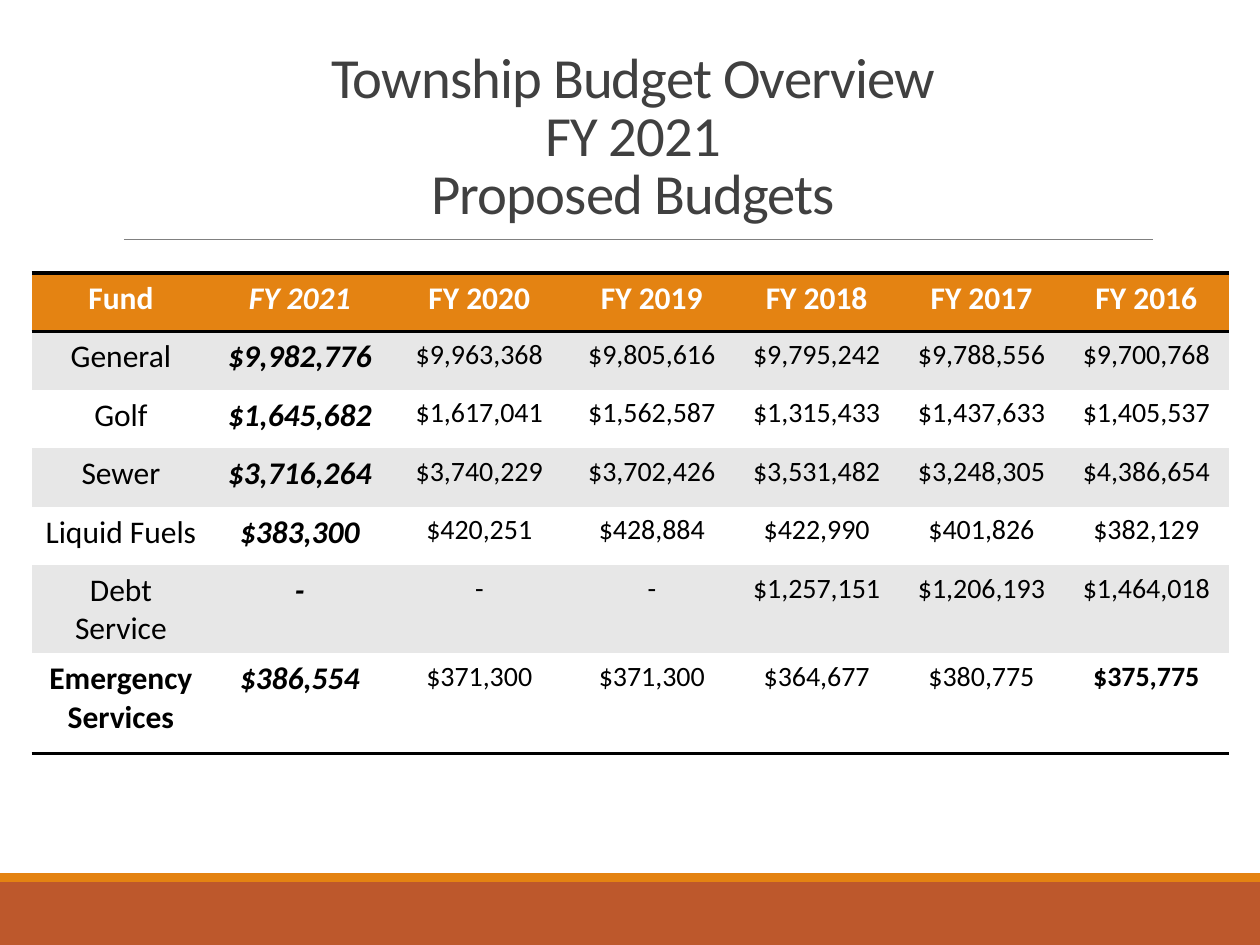
from pptx import Presentation
from pptx.dml.color import RGBColor
from pptx.enum import shapes, text
from pptx.oxml import parse_xml
from pptx.oxml.ns import nsdecls, qn
from pptx.util import Pt

ORANGE = RGBColor(0xE4, 0x83, 0x12)
RUST = RGBColor(0xBD, 0x58, 0x2C)
GRAY = RGBColor(0x80, 0x80, 0x80)
CHARCOAL = RGBColor(0x40, 0x40, 0x40)
BAND = RGBColor(0xE7, 0xE7, 0xE7)
WHITE = RGBColor(0xFF, 0xFF, 0xFF)
BLACK = RGBColor(0, 0, 0)
FONT = "Calibri"
NO_STYLE = "{2D5ABB26-0587-4C30-8999-92F81FD0307C}"

TITLE = ["Township Budget Overview", "FY 2021", "Proposed Budgets"]
BUDGETS = [
    ["Fund", "FY 2021", "FY 2020", "FY 2019", "FY 2018", "FY 2017", "FY 2016"],
    ["General", "$9,982,776", "$9,963,368", "$9,805,616", "$9,795,242", "$9,788,556", "$9,700,768"],
    ["Golf", "$1,645,682", "$1,617,041", "$1,562,587", "$1,315,433", "$1,437,633", "$1,405,537"],
    ["Sewer", "$3,716,264", "$3,740,229", "$3,702,426", "$3,531,482", "$3,248,305", "$4,386,654"],
    ["Liquid Fuels", "$383,300", "$420,251", "$428,884", "$422,990", "$401,826", "$382,129"],
    ["Debt Service", "-", "-", "-", "$1,257,151", "$1,206,193", "$1,464,018"],
    ["Emergency Services", "$386,554", "$371,300", "$371,300", "$364,677", "$380,775", "$375,775"],
]
COLUMN_WIDTHS = [102.2, 102.2, 103] + [94.2] * 4
ROW_HEIGHTS = [33.4] * 6 + [57.2]


def add_footer(page, left, top, width, height):
    """Draw a thin orange strip above a rust bar."""
    strip = 5
    for color, y, h in ((RUST, top + strip, height - strip), (ORANGE, top, strip)):
        bar = page.shapes.add_shape(
            shapes.MSO_SHAPE.RECTANGLE, Pt(left), Pt(y), Pt(width), Pt(h))
        bar.shadow.inherit = False
        bar.fill.solid()
        bar.fill.fore_color.rgb = color
        bar.line.fill.background()


def add_title(page, left, top, width, height):
    """Write the centred title and the rule along the bottom of its box."""
    bottom = top + height
    rule = page.shapes.add_connector(
        shapes.MSO_CONNECTOR.STRAIGHT,
        Pt(left + 6), Pt(bottom), Pt(left + width), Pt(bottom))
    rule.line.color.rgb = GRAY
    rule.line.width = Pt(0.5)
    rule._element.spPr.append(parse_xml(f"<a:effectLst {nsdecls('a')}/>"))

    box = page.shapes.add_textbox(Pt(left), Pt(top), Pt(width), Pt(height))
    frame = box.text_frame
    frame.word_wrap = True
    frame.vertical_anchor = text.MSO_ANCHOR.MIDDLE
    para = frame.paragraphs[0]
    para.text = "\v".join(TITLE)
    para.alignment = text.PP_ALIGN.CENTER
    para.line_spacing = 0.85
    para.font.name = FONT
    para.font.size = Pt(32.4)
    para.font.color.rgb = CHARCOAL
    for span in para.runs:
        span._r.get_or_add_rPr().set("spc", "-50")


def add_border(cell, side):
    """Add a black line to one side; call before filling, top before bottom."""
    cell._tc.get_or_add_tcPr().append(parse_xml(
        f'<a:ln{side} {nsdecls("a")} w="{Pt(2)}"><a:solidFill>'
        f'<a:srgbClr val="{BLACK}"/></a:solidFill></a:ln{side}>'))


def style_cell(cell, row, column):
    header, last_row = row == 0, row == len(BUDGETS) - 1
    current_year = column == 1
    edge_column = column in (0, len(COLUMN_WIDTHS) - 1)
    if header:
        add_border(cell, "T")
    if header or last_row:
        add_border(cell, "B")
    cell.fill.solid()
    cell.fill.fore_color.rgb = ORANGE if header else BAND if row % 2 else WHITE

    para = cell.text_frame.paragraphs[0]
    para.alignment = text.PP_ALIGN.CENTER
    font = para.font
    font.name = FONT
    font.size = Pt(18 if header or column < 2 else 16)
    font.bold = header or current_year or (last_row and edge_column)
    font.italic = current_year
    font.color.rgb = WHITE if header else BLACK


def add_budget_table(page, left, top):
    table = page.shapes.add_table(
        len(BUDGETS), len(COLUMN_WIDTHS), Pt(left), Pt(top),
        Pt(sum(COLUMN_WIDTHS)), Pt(sum(ROW_HEIGHTS))).table
    table.horz_banding = False
    table._tbl.tblPr.find(qn("a:tableStyleId")).text = NO_STYLE
    for column, width in zip(table.columns, COLUMN_WIDTHS):
        column.width = Pt(width)
    for row, height in zip(table.rows, ROW_HEIGHTS):
        row.height = Pt(height)
    for r, values in enumerate(BUDGETS):
        for c, value in enumerate(values):
            cell = table.cell(r, c)
            cell.text = value
            style_cell(cell, r, c)


def main():
    deck = Presentation()
    deck.slide_width, deck.slide_height = Pt(720), Pt(540)
    page = deck.slides.add_slide(deck.slide_layouts[6])
    add_footer(page, 0, 499, 720, 41)
    add_title(page, 64.8, 22.3, 594, 114.5)
    add_budget_table(page, 18, 156)
    deck.save("out.pptx")


if __name__ == "__main__":
    main()
